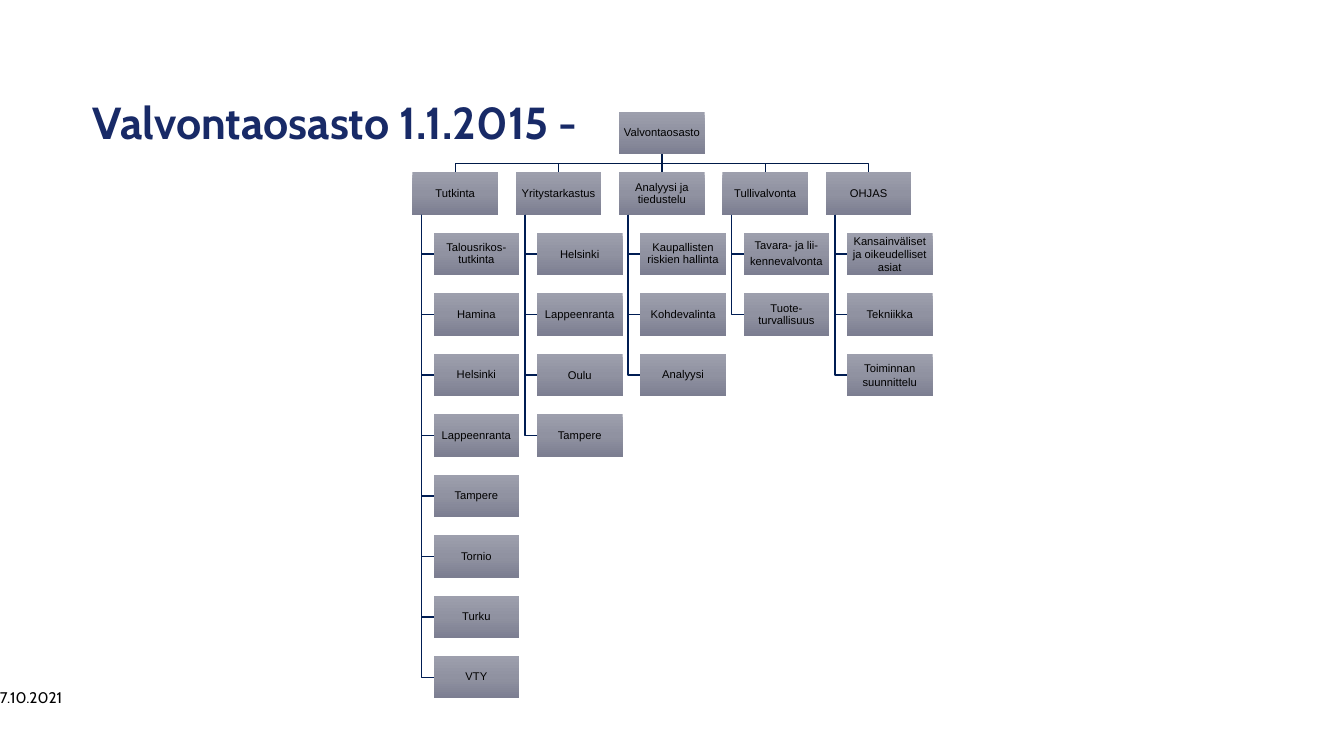
from copy import deepcopy

from pptx import Presentation
from pptx.dml.color import RGBColor
from pptx.enum.shapes import MSO_CONNECTOR, MSO_SHAPE
from pptx.enum.text import MSO_ANCHOR, PP_ALIGN
from pptx.oxml.ns import qn
from pptx.oxml.xmlchemy import OxmlElement
from pptx.util import Inches, Pt

STRAIGHT = MSO_CONNECTOR.STRAIGHT
RECT = MSO_SHAPE.RECTANGLE
TOP, MIDDLE = MSO_ANCHOR.TOP, MSO_ANCHOR.MIDDLE
LEFT, CENTER = PP_ALIGN.LEFT, PP_ALIGN.CENTER

NAVY = RGBColor(0x18, 0x2A, 0x67)
BLACK = RGBColor(0, 0, 0)
TRUNK = RGBColor(0x00, 0x1A, 0x49)
BRANCH = RGBColor(0x00, 0x1D, 0x53)
SHADES = [
    (0, RGBColor(0x9D, 0x9F, 0xAD)),
    (0.5, RGBColor(0x90, 0x92, 0xA1)),
    (1, RGBColor(0x7C, 0x7E, 0x91)),
]

ROOT_COL = 2
DEPARTMENTS = [
    ("Tutkinta", ["Talousrikos-tutkinta", "Hamina", "Helsinki", "Lappeenranta",
                  "Tampere", "Tornio", "Turku", "VTY"]),
    ("Yritystarkastus", ["Helsinki", "Lappeenranta", "Oulu", "Tampere"]),
    ("Analyysi ja tiedustelu", ["Kaupallisten riskien hallinta", "Kohdevalinta", "Analyysi"]),
    ("Tullivalvonta", ["Tavara- ja lii-\nkennevalvonta", "Tuote-turvallisuus"]),
    ("OHJAS", ["Kansainväliset ja oikeudelliset asiat", "Tekniikka", "Toiminnan suunnittelu"]),
]
SINGLE_SPACED = {(1, 2), (1, 4), (4, 2), (4, 4)}


class OrgChart:
    """Draws the organisation chart on a grid of columns and rows."""

    box_w, box_h = Inches(0.85), Inches(0.42)
    left, top = Inches(4.09), Inches(1.11)
    col_step, row_step = Inches(4.1) // 4, Inches(0.6)
    indent, stem = Inches(0.21), Inches(0.09)
    inset = Inches(0.01)

    def __init__(self, prs):
        self.prs = prs
        self.s = prs.slides.add_slide(prs.slide_layouts[6])

    def cell(self, col, row):
        return self.left + col * self.col_step, self.top + row * self.row_step

    def add_lines(self, tf, text, font, size, color, align=LEFT, bold=False, spacing=None, after=0):
        for i, line in enumerate(text.split("\n")):
            p = tf.paragraphs[0] if i == 0 else tf.add_paragraph()
            p.alignment = align
            p.line_spacing = spacing
            p.space_after = Pt(after)
            r = p.add_run()
            r.text = line
            r.font.name = font
            r.font.size = Pt(size)
            r.font.bold = bold
            r.font.color.rgb = color

    def frame(self, sp, anchor, inset=0):
        tf = sp.text_frame
        tf.word_wrap = True
        tf.vertical_anchor = anchor
        tf.margin_left = tf.margin_right = tf.margin_top = tf.margin_bottom = inset
        return tf

    def label(self, x, y, w, h, text, size, color, anchor=MIDDLE, bold=False, spacing=None):
        width, height = self.prs.slide_width, self.prs.slide_height
        sp = self.s.shapes.add_textbox(*(int(share * side / 100) for share, side in
                                         zip((x, y, w, h), (width, height) * 2)))
        self.add_lines(self.frame(sp, anchor), text, "Cabin", size, color,
                       bold=bold, spacing=spacing)

    def box(self, col, row, text, indent=0):
        x, y = self.cell(col, row)
        sp = self.s.shapes.add_shape(RECT, x + indent, y, self.box_w, self.box_h)
        sp.shadow.inherit = False
        sp.line.fill.background()
        sp.fill.gradient()
        sp.fill.gradient_angle = 270
        stops = sp._element.spPr.find(".//" + qn("a:gsLst"))
        stops.insert(1, deepcopy(stops[0]))
        for stop, (position, color) in zip(sp.fill.gradient_stops, SHADES):
            stop.position = position
            stop.color.rgb = color
        single = (col, row) in SINGLE_SPACED
        self.add_lines(self.frame(sp, MIDDLE, self.inset), text, "Arial", 8, BLACK, CENTER,
                       spacing=None if single else 0.9, after=0 if single else 2.8)
        return sp

    def elbow(self, points, color):
        builder = self.s.shapes.build_freeform(*points[0], scale=1.0)
        builder.add_line_segments(points[1:], close=False)
        sp = builder.convert_to_shape()
        sp.shadow.inherit = False
        sp.fill.background()
        sp.line.color.rgb = color
        sp.line.width = Pt(1)

    def trunk(self, root, dept):
        x1, y1 = root.left + self.box_w // 2, root.top + self.box_h
        x2, y2 = dept.left + self.box_w // 2, dept.top
        if x1 != x2:
            mid = (y1 + y2) // 2
            self.elbow([(x1, y1), (x1, mid), (x2, mid), (x2, y2)], TRUNK)
            return
        line = self.s.shapes.add_connector(STRAIGHT, x1, y1, x2, y2)
        line.begin_connect(root, 2)
        line.end_connect(dept, 0)
        line.line.color.rgb = TRUNK
        line.line.width = Pt(1)
        line._element.spPr.append(OxmlElement("a:effectLst"))

    def branch(self, dept, unit):
        x, y = dept.left + self.stem, unit.top + self.box_h // 2
        self.elbow([(x, dept.top + self.box_h), (x, y), (unit.left, y)], BRANCH)


def main():
    prs = Presentation()
    prs.slide_width, prs.slide_height = Inches(13.33), Inches(7.5)
    chart = OrgChart(prs)
    chart.label(6.9, 13.73, 86.27, 14.13, "Valvontaosasto 1.1.2015 -", 32, NAVY,
                anchor=TOP, bold=True, spacing=Pt(32))
    chart.label(0, 89.6, 7.65, 5.33, "7.10.2021", 11, BLACK)
    root = chart.box(ROOT_COL, 0, "Valvontaosasto")
    for col, (name, units) in enumerate(DEPARTMENTS):
        dept = chart.box(col, 1, name)
        chart.trunk(root, dept)
        for row, unit_name in enumerate(units, start=2):
            unit = chart.box(col, row, unit_name, chart.indent)
            chart.branch(dept, unit)
    prs.save("out.pptx")


if __name__ == "__main__":
    main()
